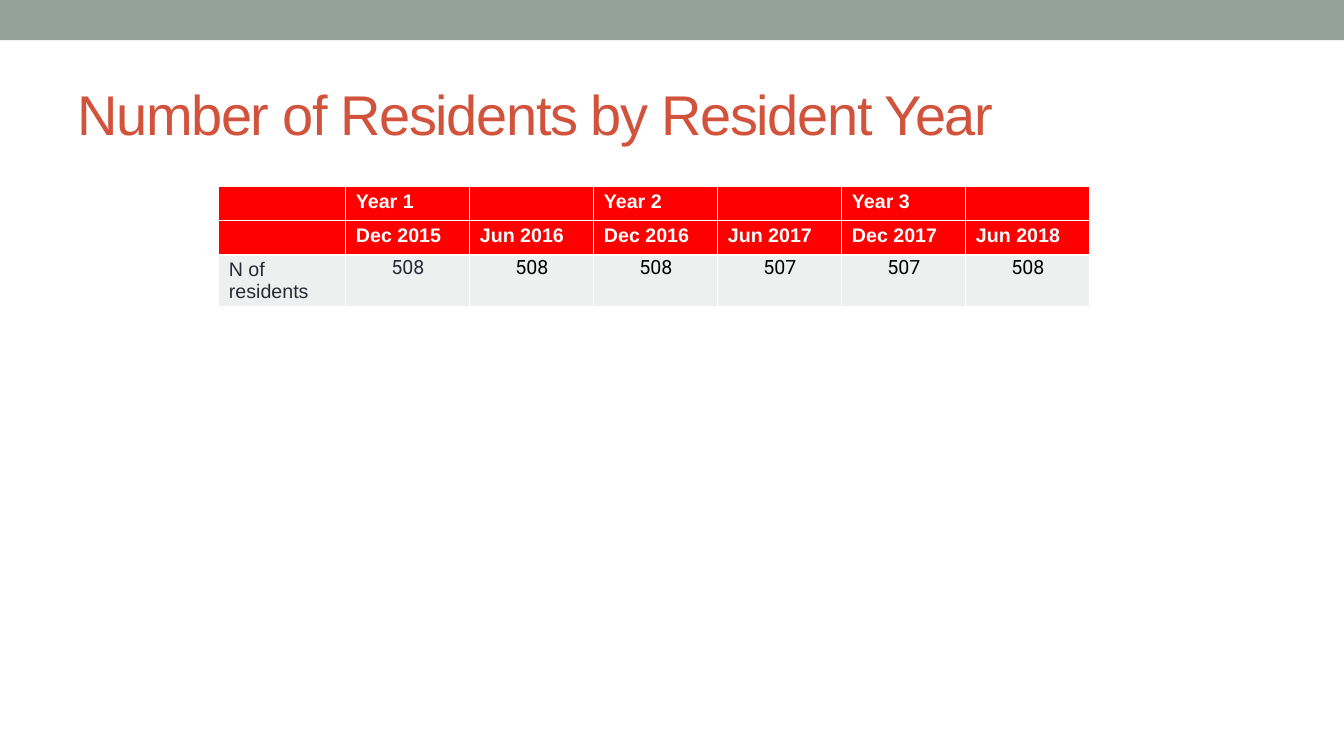
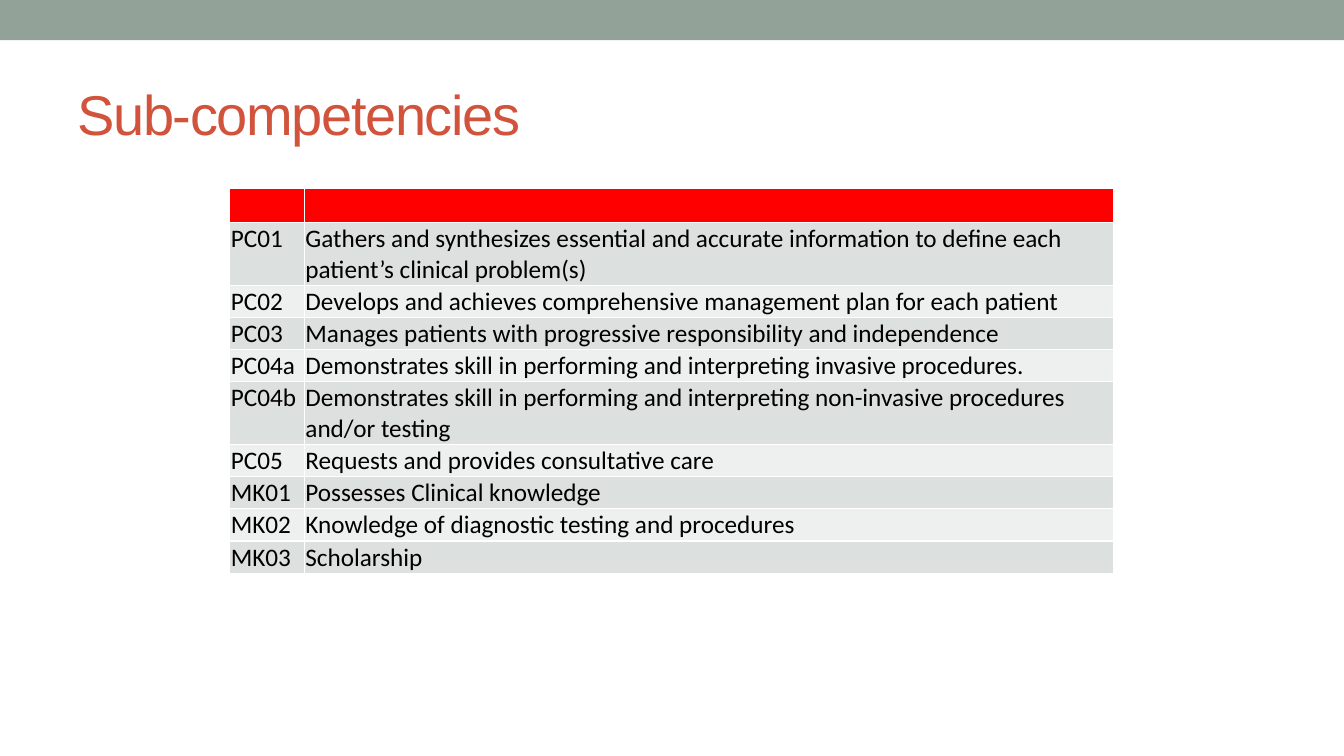
"""Build two slides on resident numbers and sub-competencies."""
from lxml import etree
from pptx import Presentation
from pptx.dml.color import RGBColor
from pptx.enum.shapes import MSO_SHAPE
from pptx.enum.text import MSO_ANCHOR, PP_ALIGN
from pptx.oxml.ns import qn
from pptx.util import Inches, Pt

BAND, TITLE, HEADER = "93A299", "D2533C", "FF0000"
DARK, LIGHT = "DCE0DE", "EEF0EF"
WHITE, BLACK, INK = "FFFFFF", "000000", "292934"
WIDE = (0.1, 0.04, 0.1, 0.04)
TIGHT = (0.01, 0.01, 0.01, 0)


def add_run(p, text, size, font, color, bold=False):
    r = p.add_run()
    r.text = text
    r.font.size, r.font.name, r.font.bold = Pt(size), font, bold
    r.font.color.rgb = RGBColor.from_string(color)
    return r


def style_cell(cell, fill, margins):
    cell.margin_left, cell.margin_top, cell.margin_right, cell.margin_bottom = map(Inches, margins)
    tcPr = cell._tc.get_or_add_tcPr()
    for side in ("a:lnL", "a:lnR", "a:lnT", "a:lnB"):
        ln = etree.SubElement(tcPr, qn(side), w=str(Pt(1)))
        line_fill = etree.SubElement(ln, qn("a:solidFill"))
        etree.SubElement(line_fill, qn("a:srgbClr"), val=WHITE)
    cell.fill.solid()
    cell.fill.fore_color.rgb = RGBColor.from_string(fill)


prs = Presentation()
prs.slide_width, prs.slide_height = Inches(13.33), Inches(7.5)

residents = [
    ["", "Year 1", "", "Year 2", "", "Year 3", ""],
    ["", "Dec 2015", "Jun 2016", "Dec 2016", "Jun 2017", "Dec 2017", "Jun 2018"],
    ["N of residents", "508", "508", "508", "507", "507", "508"],
]
competencies = [
    ["", ""],
    ["PC01", "Gathers and synthesizes essential and accurate information to define each "
             "patient’s clinical problem(s)"],
    ["PC02", "Develops and achieves comprehensive management plan for each patient"],
    ["PC03", "Manages patients with progressive responsibility and independence"],
    ["PC04a", "Demonstrates skill in performing and interpreting invasive procedures."],
    ["PC04b", "Demonstrates skill in performing and interpreting non-invasive procedures "
              "and/or testing"],
    ["PC05", "Requests and provides consultative care"],
    ["MK01", "Possesses Clinical knowledge"],
    ["MK02", "Knowledge of diagnostic testing and procedures"],
    ["MK03", "Scholarship"],
]
slides = [
    ("Number of Residents by Resident Year", residents, 2.17, 1.85,
     [1.26] + [1.23] * 6, [0.34, 0.34, 0.5]),
    ("Sub-competencies", competencies, 2.28, 1.87,
     [0.74, 8.03], [0.34] + [0.62 if len(text) > 75 else 0.32 for _, text in competencies[1:]]),
]

tables = []
for title, rows, left, top, widths, heights in slides:
    s = prs.slides.add_slide(prs.slide_layouts[6])
    band = s.shapes.add_shape(MSO_SHAPE.RECTANGLE, 0, 0, prs.slide_width, Inches(0.4))
    band.shadow.inherit = False
    band.fill.solid()
    band.fill.fore_color.rgb = RGBColor.from_string(BAND)
    band.line.fill.background()

    frame = s.shapes.add_table(len(rows), len(widths), Inches(left), Inches(top),
                               Inches(sum(widths)), Inches(sum(heights)))
    table = frame.table
    table.first_row = table.horz_banding = False
    for column, width in zip(table.columns, widths):
        column.width = Inches(width)
    for row, height in zip(table.rows, heights):
        row.height = Inches(height)
    tables.append(table)

    sp = s.shapes.add_textbox(Inches(0.67), Inches(0.58), Inches(12), Inches(1.08))
    tf = sp.text_frame
    tf.word_wrap = True
    tf.vertical_anchor = MSO_ANCHOR.MIDDLE
    r = add_run(tf.paragraphs[0], title, 40, "Arial", TITLE)
    r.font._element.set("spc", "-100")

residents_table, competencies_table = tables

for i, row in enumerate(residents):
    for j, text in enumerate(row):
        cell = residents_table.cell(i, j)
        is_header, is_count = i < 2, i == 2 and j > 0
        style_cell(cell, HEADER if is_header else LIGHT, TIGHT if is_count or not text else WIDE)
        p = cell.text_frame.paragraphs[0]
        if is_count:
            p.alignment = PP_ALIGN.CENTER
            add_run(p, text, 14, "Roboto", INK if j == 1 else BLACK)
        elif text:
            add_run(p, text, 14, "Arial", WHITE if is_header else INK, is_header)

for i, row in enumerate(competencies):
    for j, text in enumerate(row):
        cell = competencies_table.cell(i, j)
        style_cell(cell, HEADER if i == 0 else DARK if i % 2 else LIGHT, TIGHT)
        if text:
            add_run(cell.text_frame.paragraphs[0], text, 18, "Calibri", BLACK)

prs.save("out.pptx")
